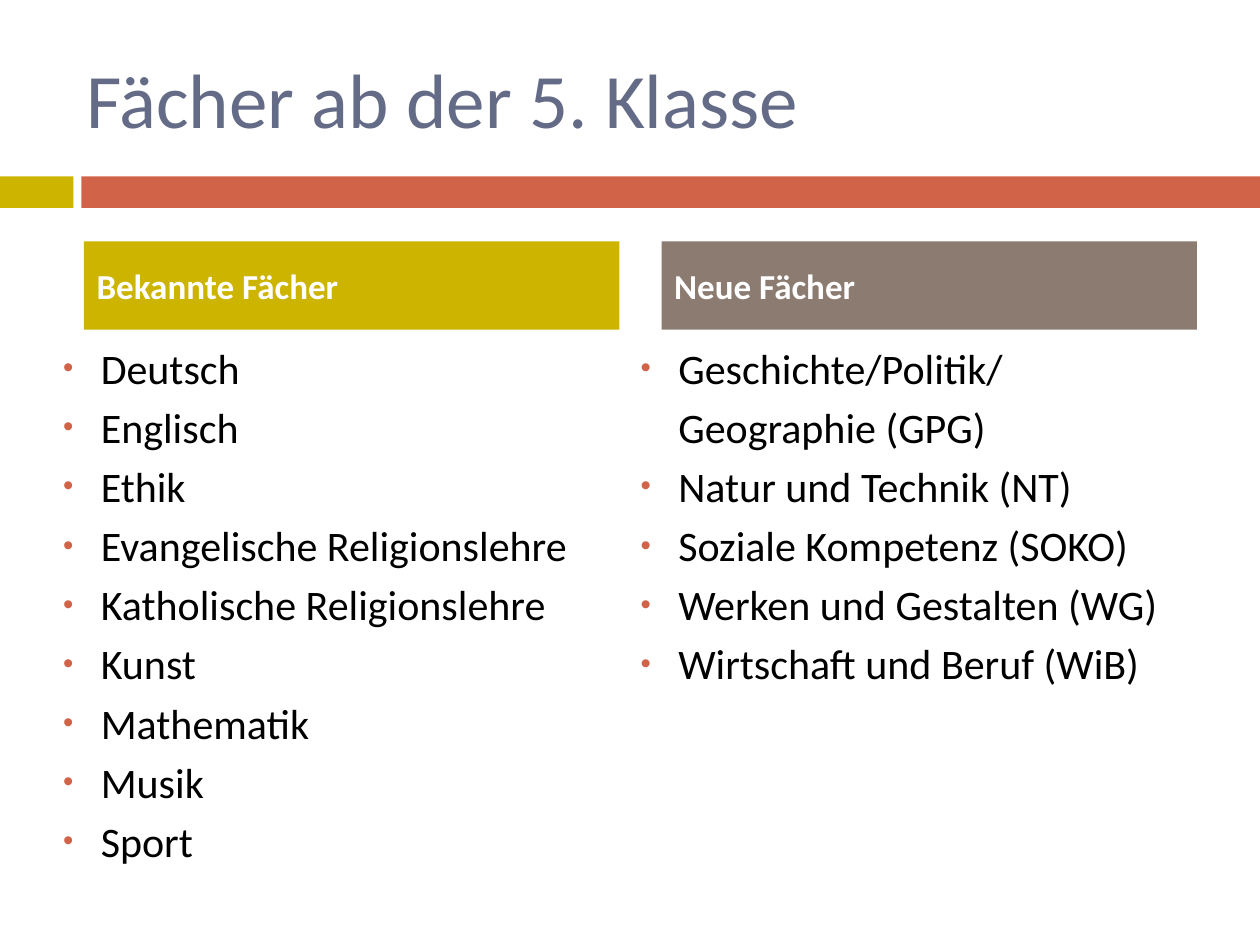
from lxml import etree
from pptx import Presentation
from pptx.dml.color import RGBColor
from pptx.enum import shapes, text
from pptx.oxml import ns
from pptx.util import Pt

THEME = {
    "font": "Calibri",
    "title": "646B86", "body": "000000", "header": "FFFFFF",
    "accent": "D16349", "olive": "CCB400", "taupe": "8C7B70",
    "title_size": 44, "header_size": 20, "body_size": 24,
}
INDENT, HANGING = 50.4, -21.6
COLUMN_WIDTH, HEADER_WIDTH = 354, 306

known = ["Deutsch", "Englisch", "Ethik", "Evangelische Religionslehre",
         "Katholische Religionslehre", "Kunst", "Mathematik", "Musik", "Sport"]
new = ["Geschichte/Politik/", "Geographie (GPG)", "Natur und Technik (NT)",
       "Soziale Kompetenz\u00a0(SOKO)", "Werken und Gestalten (WG)",
       "Wirtschaft und Beruf (WiB)"]
continuations = {"Geographie (GPG)"}


def fill_text(box, lines, role, before, bold=False):
    """Write the lines into a placeholder in the theme style of the role."""
    frame = box.text_frame
    frame.text = "\n".join(lines)
    frame.auto_size = text.MSO_AUTO_SIZE.NONE
    frame.word_wrap = True
    frame.vertical_anchor = (text.MSO_ANCHOR.TOP if role == "body"
                             else text.MSO_ANCHOR.MIDDLE)
    style = {"name": THEME["font"], "size": Pt(THEME[role + "_size"]), "bold": bold}
    for para in frame.paragraphs:
        para.alignment = text.PP_ALIGN.LEFT
        para.space_before = Pt(before)
        for span in para.runs:
            for key, value in style.items():
                setattr(span.font, key, value)
            span.font.color.rgb = RGBColor.from_string(THEME[role])


def set_bullet(para, hanging):
    properties = para._p.get_or_add_pPr()
    properties.set("marL", str(Pt(INDENT)))
    properties.set("indent", str(Pt(hanging)))
    if not hanging:
        etree.SubElement(properties, ns.qn("a:buNone"))
        return
    color = etree.SubElement(properties, ns.qn("a:buClr"))
    etree.SubElement(color, ns.qn("a:srgbClr"), val=THEME["accent"])
    etree.SubElement(properties, ns.qn("a:buSzPct"), val="70000")
    etree.SubElement(properties, ns.qn("a:buFont"), typeface="Arial")
    etree.SubElement(properties, ns.qn("a:buChar"), char="•")


deck = Presentation()
deck.slide_width, deck.slide_height = Pt(720), Pt(540)
page = deck.slides.add_slide(deck.slide_layouts.get_by_name("Comparison"))
places = {box.placeholder_format.idx: box for box in page.placeholders}

# Divider bars
for left, width, color in [(0, 42, "olive"), (46.5, 673.5, "accent")]:
    bar = page.shapes.add_shape(shapes.MSO_SHAPE.RECTANGLE,
                                Pt(left), Pt(100.8), Pt(width), Pt(18))
    bar.shadow.inherit = False
    bar.fill.solid()
    bar.fill.fore_color.rgb = RGBColor.from_string(THEME[color])
    bar.line.fill.background()

# Title
title = page.shapes.title
title.left, title.top, title.width, title.height = Pt(42), Pt(21.6), Pt(642), Pt(68.4)
fill_text(title, ["Fächer ab der 5. Klasse"], "title", 0)

# Two columns: coloured header above a list, sharing the right edge
columns = [
    (1, 354, "Bekannte Fächer", "olive", known, 339),
    (3, 684, "Neue Fächer", "taupe", new, 310),
]
for index, right, heading, color, subjects, height in columns:
    header, body = places[index], places[index + 1]
    header.left, header.top = Pt(right - HEADER_WIDTH), Pt(138)
    header.width, header.height = Pt(HEADER_WIDTH), Pt(50.4)
    header.fill.solid()
    header.fill.fore_color.rgb = RGBColor.from_string(THEME[color])
    fill_text(header, [heading], "header", 7, bold=True)

    body.left, body.top = Pt(right - COLUMN_WIDTH), Pt(192)
    body.width, body.height = Pt(COLUMN_WIDTH), Pt(height)
    fill_text(body, subjects, "body", 5)
    for para in body.text_frame.paragraphs:
        continued = para.text in continuations
        para.level = 2 if continued else 1
        set_bullet(para, 0 if continued else HANGING)

deck.save("out.pptx")
